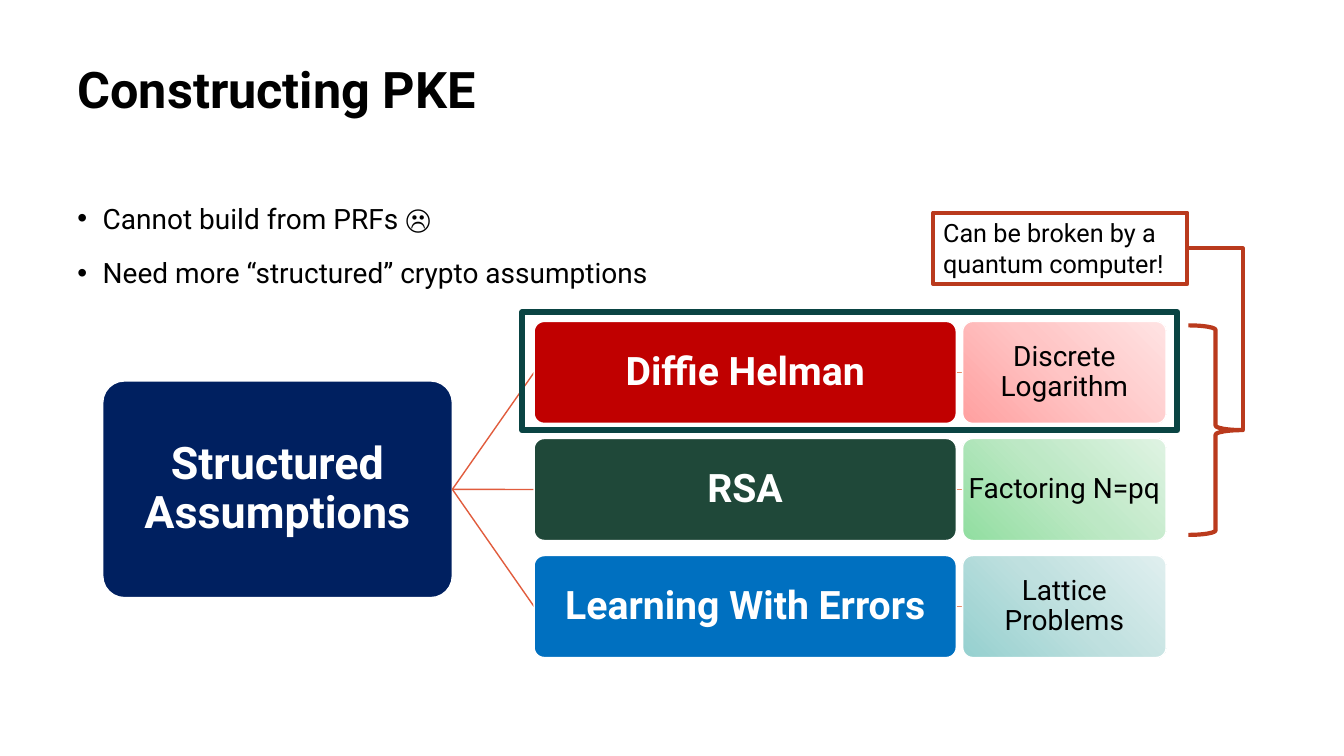
from dataclasses import dataclass
from copy import deepcopy

from lxml.etree import SubElement
from pptx import Presentation
from pptx.dml.color import RGBColor
from pptx.enum.shapes import MSO_CONNECTOR, MSO_SHAPE
from pptx.enum.text import MSO_ANCHOR, PP_ALIGN
from pptx.oxml.ns import qn
from pptx.shapes.autoshape import Shape
from pptx.shapes.connector import Connector
from pptx.text.text import TextFrame
from pptx.util import Cm, Pt

BLACK = RGBColor(0x00, 0x00, 0x00)
WHITE = RGBColor(0xFF, 0xFF, 0xFF)
NAVY = RGBColor(0x00, 0x20, 0x60)
RED = RGBColor(0xC0, 0x00, 0x00)
GREEN = RGBColor(0x1F, 0x48, 0x39)
BLUE = RGBColor(0x00, 0x70, 0xC0)
TEAL = RGBColor(0x0A, 0x44, 0x43)
RUST = RGBColor(0xBA, 0x3A, 0x1D)
CORAL = RGBColor(0xE1, 0x5C, 0x3D)
PEACH = RGBColor(0xE7, 0x8A, 0x67)
PINKS = (RGBColor(0xFF, 0xA0, 0xA0), RGBColor(0xFF, 0xC5, 0xC5), RGBColor(0xFF, 0xE3, 0xE3))
MINTS = (RGBColor(0x91, 0xDE, 0xA0), RGBColor(0xBD, 0xE8, 0xC5), RGBColor(0xDF, 0xF3, 0xE3))
AQUAS = (RGBColor(0x95, 0xD0, 0xCF), RGBColor(0xBF, 0xE0, 0xDF), RGBColor(0xE0, 0xEF, 0xEF))

FONT = "Roboto"


@dataclass(frozen=True)
class Box:
    """A place on the slide, in centimetres."""
    left: float
    top: float
    width: float
    height: float

    @property
    def right(self) -> float:
        return self.left + self.width

    @property
    def mid(self) -> float:
        return self.top + self.height / 2

    def lengths(self) -> tuple[Cm, ...]:
        return tuple(Cm(n) for n in (self.left, self.top, self.width, self.height))


@dataclass(frozen=True)
class Scheme:
    name: str
    color: RGBColor
    problem: str
    tints: tuple[RGBColor, ...]


SCHEMES = (
    Scheme("Diffie Helman", RED, "Discrete Logarithm", PINKS),
    Scheme("RSA", GREEN, "Factoring N=pq", MINTS),
    Scheme("Learning With Errors", BLUE, "Lattice Problems", AQUAS),
)
HUB = Box(2.59, 9.6, 8.81, 5.46)
ROW_TOP, ROW_STEP, ROW_HIGH = 8.1, 2.95, 2.57

deck = Presentation()
deck.slide_width, deck.slide_height = Cm(33.87), Cm(19.05)
slide = deck.slides.add_slide(deck.slide_layouts[5])


def write(frame: TextFrame, *lines: str, size: float, color: RGBColor = BLACK,
          bold: bool = False, align: PP_ALIGN = PP_ALIGN.LEFT,
          anchor: MSO_ANCHOR = MSO_ANCHOR.TOP, spacing: float = 1.0,
          gap: float = 0, bullet: bool = False) -> None:
    frame.word_wrap = True
    frame.vertical_anchor = anchor
    for i, line in enumerate(lines):
        para = frame.paragraphs[0] if i == 0 else frame.add_paragraph()
        para.alignment, para.line_spacing = align, spacing
        para.space_before = Pt(gap if i else 0)
        if bullet:
            props = para._p.get_or_add_pPr()
            props.set("marL", str(Cm(0.64)))
            props.set("indent", str(-Cm(0.64)))
            SubElement(props, qn("a:buFont"), typeface="Arial")
            SubElement(props, qn("a:buChar"), char="•")
        run = para.add_run()
        run.text = line
        font = run.font
        font.name, font.size, font.bold = FONT, Pt(size), bold
        font.color.rgb = color


def draw(kind: MSO_SHAPE, box: Box, line: RGBColor, width: float) -> Shape:
    """Add an unfilled preset shape."""
    shape = slide.shapes.add_shape(kind, *box.lengths())
    shape.shadow.inherit = False
    shape.fill.background()
    shape.line.color.rgb = line
    shape.line.width = Pt(width)
    return shape


def blend(shape: Shape, tints: tuple[RGBColor, ...]) -> None:
    """Fill with evenly spaced tints, from bottom left to top right."""
    shape.fill.gradient()
    shape.fill.gradient_angle = 45
    stops = shape._element.spPr.find(qn("a:gradFill")).find(qn("a:gsLst"))
    stops.insert(1, deepcopy(stops[0]))
    for i, (stop, tint) in enumerate(zip(shape.fill.gradient_stops, tints)):
        stop.position = i / (len(tints) - 1)
        stop.color.rgb = tint


def card(box: Box, text: str, fills: tuple[RGBColor, ...], *, size: float,
         color: RGBColor = WHITE, bold: bool = True) -> None:
    shape = draw(MSO_SHAPE.ROUNDED_RECTANGLE, box, WHITE, 1)
    shape.adjustments[0] = 0.1
    if len(fills) == 1:
        shape.fill.solid()
        shape.fill.fore_color.rgb = fills[0]
    else:
        blend(shape, fills)
    frame = shape.text_frame
    frame.margin_left = frame.margin_right = Cm(0.03)
    frame.margin_top = frame.margin_bottom = Cm(0.03)
    write(frame, text, size=size, color=color, bold=bold, spacing=0.9,
          align=PP_ALIGN.CENTER, anchor=MSO_ANCHOR.MIDDLE)


def link(x1: float, y1: float, x2: float, y2: float, color: RGBColor,
         width: float = 1, kind: MSO_CONNECTOR = MSO_CONNECTOR.STRAIGHT) -> Connector:
    line = slide.shapes.add_connector(kind, Cm(x1), Cm(y1), Cm(x2), Cm(y2))
    line.line.color.rgb = color
    line.line.width = Pt(width)
    SubElement(line._element.spPr, qn("a:effectLst"))
    return line


def main() -> None:
    title = slide.shapes.title
    title.left, title.top, title.width, title.height = Box(1.7, 1.52, 29.6, 3.15).lengths()
    write(title.text_frame, "Constructing PKE", size=36, bold=True, spacing=0.9)

    body = slide.shapes.add_textbox(*Box(1.7, 4.78, 29.6, 2.8).lengths())
    write(body.text_frame, "Cannot build from PRFs ☹",
          "Need more “structured” crypto assumptions",
          size=20, spacing=1.2, gap=10, bullet=True)

    card(HUB, "Structured Assumptions", (NAVY,), size=32)
    for i, scheme in enumerate(SCHEMES):
        top = ROW_TOP + i * ROW_STEP
        name = Box(13.46, top, 10.64, ROW_HIGH)
        leaf = Box(24.26, top, 5.13, ROW_HIGH)
        link(HUB.right, HUB.mid, name.left, name.mid, CORAL)
        link(name.right, name.mid, leaf.left, leaf.mid, PEACH)
        card(name, scheme.name, (scheme.color,), size=28)
        card(leaf, scheme.problem, scheme.tints, size=20, color=BLACK, bold=False)

    draw(MSO_SHAPE.RECTANGLE, Box(13.16, 7.87, 16.51, 2.97), TEAL, 4.5)

    brace = Box(29.95, 8.2, 1.37, 5.28)
    draw(MSO_SHAPE.RIGHT_BRACE, brace, RUST, 3)
    note = Box(23.52, 5.36, 6.4, 1.8)
    label = draw(MSO_SHAPE.RECTANGLE, note, RUST, 3)
    write(label.text_frame, "Can be broken by a quantum computer!", size=18)
    elbow = link(note.right, note.mid, brace.right, brace.mid, RUST, 3, MSO_CONNECTOR.ELBOW)
    bend = elbow._element.spPr.find(qn("a:prstGeom")).find(qn("a:avLst"))
    SubElement(bend, qn("a:gd"), name="adj1", fmla="val 100000")

    deck.save("out.pptx")


if __name__ == "__main__":
    main()
